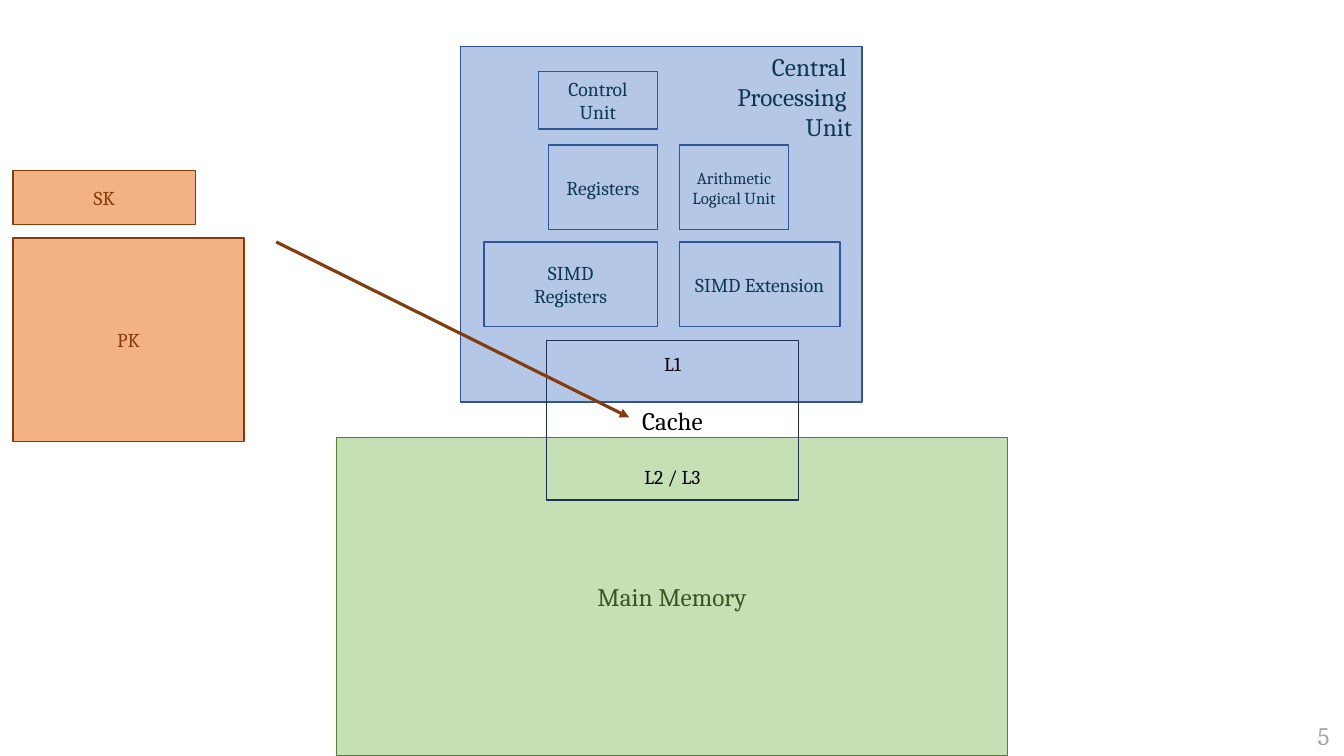
from lxml import etree
from pptx import Presentation
from pptx.dml.color import RGBColor
from pptx.enum.shapes import MSO_CONNECTOR, MSO_SHAPE
from pptx.enum.text import MSO_ANCHOR, PP_ALIGN
from pptx.oxml.ns import qn
from pptx.util import Inches, Pt

RECT = MSO_SHAPE.RECTANGLE
LINE = MSO_CONNECTOR.STRAIGHT
TOP, MIDDLE = MSO_ANCHOR.TOP, MSO_ANCHOR.MIDDLE
LEFT, CENTER, RIGHT = PP_ALIGN.LEFT, PP_ALIGN.CENTER, PP_ALIGN.RIGHT

BLUE = RGBColor(0xB4, 0xC7, 0xE7)
EDGE = RGBColor(0x2F, 0x55, 0x97)
NAVY = RGBColor(0x0E, 0x37, 0x54)
DARK = RGBColor(0x1E, 0x32, 0x56)
GREEN = RGBColor(0xC5, 0xE0, 0xB4)
MOSS = RGBColor(0x54, 0x82, 0x35)
FOREST = RGBColor(0x38, 0x57, 0x23)
PEACH = RGBColor(0xF4, 0xB1, 0x83)
BROWN = RGBColor(0x84, 0x3C, 0x0B)
BLACK = RGBColor(0, 0, 0)
GRAY = RGBColor(0xA5, 0xA5, 0xA5)


class Board:
    """Holds the slide and its text style."""

    font = "Cambria"

    def __init__(self, slide):
        self.slide = slide

    def fill_text(self, frame, text, size, color, align=CENTER):
        frame.text = text
        for para in frame.paragraphs:
            para.alignment = align
            for run in para.runs:
                run.font.name = self.font
                run.font.size = Pt(size)
                run.font.color.rgb = color

    def box(self, at, text, size=14, fill=BLUE, edge=EDGE, color=NAVY,
            align=CENTER, anchor=MIDDLE):
        shape = self.slide.shapes.add_shape(RECT, *map(Inches, at))
        shape.shadow.inherit = False
        if fill is None:
            shape.fill.background()
        else:
            shape.fill.solid()
            shape.fill.fore_color.rgb = fill
        shape.line.color.rgb = edge
        shape.line.width = Pt(1)
        shape.text_frame.word_wrap = True
        shape.text_frame.vertical_anchor = anchor
        self.fill_text(shape.text_frame, text, size, color, align)
        return shape

    def arrow(self, start, end, color, width):
        line = self.slide.shapes.add_connector(
            LINE, *map(Inches, start + end))
        line.line.color.rgb = color
        line.line.width = Pt(width)
        props = line._element.spPr
        tip = etree.SubElement(props.find(qn("a:ln")), qn("a:tailEnd"))
        tip.set("type", "triangle")
        etree.SubElement(props, qn("a:effectLst"))

    def label(self, at, text, size, color):
        area = self.slide.shapes.add_textbox(*map(Inches, at))
        area.text_frame.word_wrap = True
        self.fill_text(area.text_frame, text, size, color, LEFT)


def main():
    deck = Presentation()
    deck.slide_width, deck.slide_height = Inches(13.33), Inches(7.5)
    board = Board(deck.slides.add_slide(deck.slide_layouts[6]))

    # Processor and main memory
    board.box((4.57, 0.46, 3.98, 3.53), "Central \nProcessing \nUnit", 18,
              align=RIGHT, anchor=TOP)
    board.box((3.34, 4.34, 6.65, 3.16), "Main Memory", 18,
              GREEN, MOSS, FOREST)

    # Processor parts: the left column ends at one edge, the right starts at one
    inner, outer = 6.52, 6.74
    for top, width, height, text in (
            (0.71, 1.18, 0.57, "Control Unit"),
            (1.44, 1.08, 0.84, "Registers"),
            (2.4, 1.72, 0.84, "SIMD\nRegisters")):
        board.box((inner - width, top, width, height), text)
    for top, width, text, size in (
            (1.44, 1.08, "Arithmetic Logical Unit", 12),
            (2.4, 1.59, "SIMD Extension", 14)):
        board.box((outer, top, width, 0.84), text, size)

    # Cache across both
    cache = board.box((5.42, 3.38, 2.5, 1.58), "L1\nCache\nL2 / L3",
                      fill=None, edge=DARK, color=BLACK)
    _, name, last = cache.text_frame.paragraphs
    name.runs[0].font.size = Pt(18)
    name.space_before = last.space_before = Pt(21)

    # Keys and their way into the cache
    for top, width, height, text in (
            (1.69, 1.81, 0.54, "SK"), (2.36, 2.29, 2.02, "PK")):
        board.box((0.13, top, width, height), text,
                  fill=PEACH, edge=BROWN, color=BROWN)
    board.arrow((2.74, 2.4), (6.24, 4.14), BROWN, 2.25)

    # Page number
    board.label((12.97, 7.1, 0.36, 0.4), "5", 18, GRAY)

    deck.save("out.pptx")


if __name__ == "__main__":
    main()
